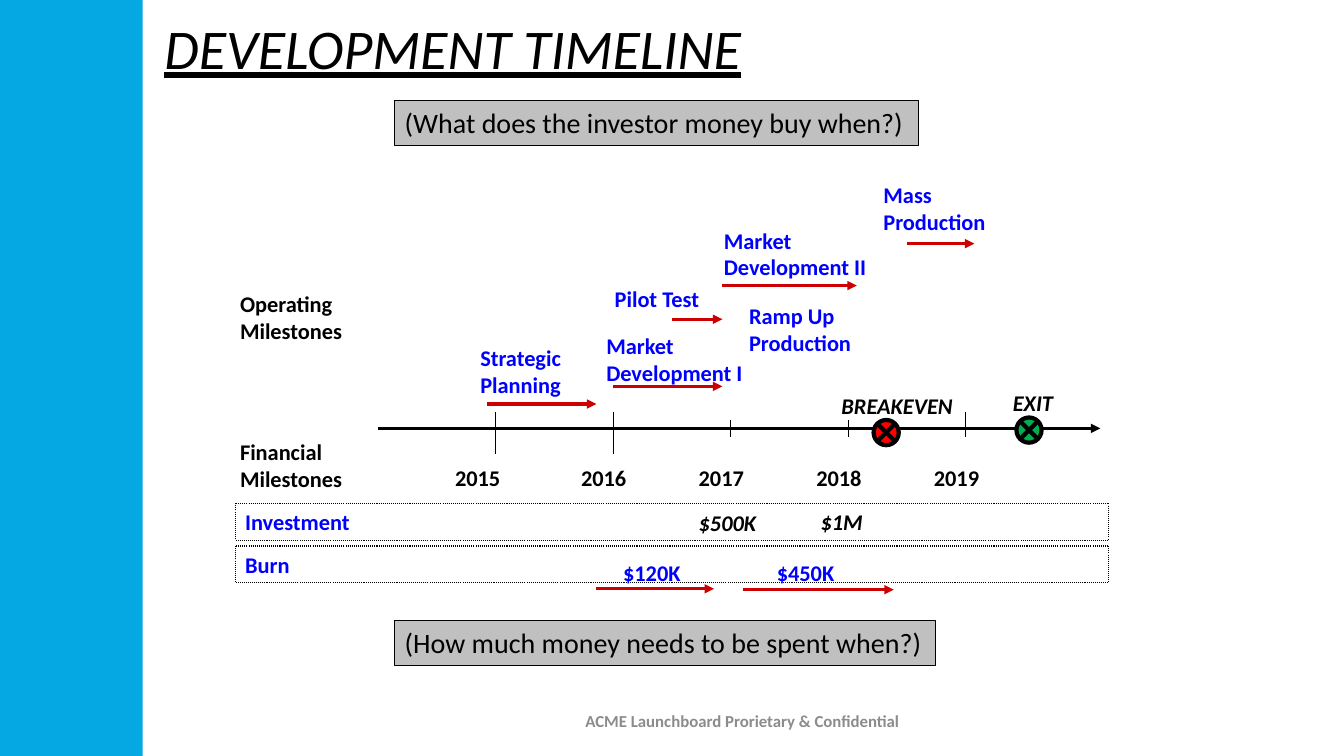
from lxml import etree
from pptx import Presentation
from pptx.dml.color import RGBColor
from pptx.enum.dml import MSO_LINE_DASH_STYLE as DASH
from pptx.enum.shapes import MSO_CONNECTOR, MSO_SHAPE as SHAPE
from pptx.enum.text import MSO_ANCHOR, MSO_AUTO_SIZE as FIT, PP_ALIGN
from pptx.oxml.ns import qn
from pptx.util import Inches, Pt

# The slide is a grid of 160 columns by 90 rows
COLUMNS, ROWS = 160, 90
CELL = Inches(1 / 12)

BLACK = RGBColor(0x00, 0x00, 0x00)
BLUE = RGBColor(0x00, 0x00, 0xFF)
CRIMSON = RGBColor(0xCC, 0x00, 0x00)
RED = RGBColor(0xFF, 0x00, 0x00)
GREEN = RGBColor(0x00, 0xB0, 0x50)
SKY = RGBColor(0x05, 0xA8, 0xE3)
SILVER = RGBColor(0xC0, 0xC0, 0xC0)
GRAY = RGBColor(0x8C, 0x8C, 0x8C)

AXIS_ROW = 51
FIRST_TICK, YEAR_STEP = 59, 14
LINE_HEIGHT, TWO_LINE_HEIGHT = 4.4, 7.7

# Year, offset of its label from the tick, top and bottom of the tick
YEARS = [
    ("2015", -6, 49, 54),
    ("2016", -5, 49, 54),
    ("2017", -5, 50, 52),
    ("2018", -5, 50, 52),
    ("2019", -5, 49, 52),
]
# Text, column, row, width
OPERATING = [
    ("Strategic\nPlanning", 56, 40.4, 12.7),
    ("Market\nDevelopment I", 71, 39, 18.8),
    ("Market\nDevelopment II", 85, 26.4, 19.6),
    ("Pilot Test", 72, 33.4, 12.6),
    ("Mass\nProduction", 104, 21, 15.4),
    ("Ramp Up\nProduction", 88, 35.4, 15.4),
]
BURN = [("$120K", 73, 66, 9.4), ("$450K", 91.3, 66, 9.4)]
HEADINGS = [
    ("Operating\nMilestones", 27.4, 34, 14.6),
    ("Financial\nMilestones", 27.4, 51.6, 14.6),
]
EVENTS = [
    ("BREAKEVEN", 99, 46.1, 15.8),
    ("EXIT", 119.4, 45.7, 7.3),
    ("$500K", 82, 60, 12),
    ("$1M", 96.5, 59.9, 10),
]
# Start column, end column, row
SPANS = [
    (58, 71, 48.1), (73, 86, 46), (80, 86, 38), (86, 102, 34),
    (108, 116, 29), (71, 85, 70.1), (88.4, 106.4, 70.2),
]


def grid(*cells):
    return [round(cell * CELL) for cell in cells]


def write(shape, text, size=16, color=BLACK, bold=True, italic=False, underline=False):
    frame = shape.text_frame
    frame.text = text
    frame.word_wrap = False
    frame.auto_size = FIT.SHAPE_TO_FIT_TEXT
    frame.vertical_anchor = MSO_ANCHOR.TOP
    for paragraph in frame.paragraphs:
        paragraph.alignment = PP_ALIGN.LEFT
        font = paragraph.font
        font.name, font.size = "Calibri", Pt(size)
        font.bold, font.italic, font.underline = bold, italic, underline
        font.color.rgb = color
    return frame


def add_label(slide, text, column, row, width, height=None, **style):
    height = height or (TWO_LINE_HEIGHT if "\n" in text else LINE_HEIGHT)
    label = slide.shapes.add_textbox(*grid(column, row, width, height))
    return write(label, text, **style)


def add_block(slide, kind, box, fill=None, weight=0, dash=None):
    block = slide.shapes.add_shape(kind, *grid(*box))
    block.shadow.inherit = False
    if fill is None:
        block.fill.background()
    else:
        block.fill.solid()
        block.fill.fore_color.rgb = fill
    if weight:
        block.line.color.rgb = BLACK
        block.line.width = Pt(weight)
        if dash:
            block.line.dash_style = dash
    else:
        block.line.fill.background()
    return block


def add_line(slide, start, end, color=BLACK, weight=2.25, arrow=True):
    line = slide.shapes.add_connector(MSO_CONNECTOR.STRAIGHT, *grid(*start, *end))
    line.line.color.rgb = color
    line.line.width = Pt(weight)
    if arrow:
        etree.SubElement(line.line._get_or_add_ln(), qn("a:tailEnd"), type="triangle")
    etree.SubElement(line._element.spPr, qn("a:effectLst"))


def add_question(slide, text, row, width):
    banner = add_block(slide, SHAPE.RECTANGLE, (47, row, width, 5.3), SILVER, 0.75)
    write(banner, text, size=20, bold=False)


def add_money_row(slide, text, row):
    box = (28, row, 104, LINE_HEIGHT)
    strip = add_block(slide, SHAPE.RECTANGLE, box, weight=0.75, dash=DASH.ROUND_DOT)
    write(strip, text, color=BLUE).word_wrap = True


def add_timeline(slide):
    add_line(slide, (45, AXIS_ROW), (131, AXIS_ROW))
    for index, (year, offset, top, bottom) in enumerate(YEARS):
        tick = FIRST_TICK + index * YEAR_STEP
        add_line(slide, (tick, bottom), (tick, top), weight=0.75, arrow=False)
        add_label(slide, year, tick + offset, 54.7, 7.9)
    for start, end, row in SPANS:
        add_line(slide, (start, row), (end, row), CRIMSON)
    for column, row, color in ((104, 50, RED), (121, 49.7, GREEN)):
        add_block(slide, SHAPE.FLOWCHART_SUMMING_JUNCTION, (column, row, 3, 3), color, 3)


def main():
    deck = Presentation()
    deck.slide_width, deck.slide_height = grid(COLUMNS, ROWS)
    slide = deck.slides.add_slide(deck.slide_layouts[6])

    # Side band, title and questions
    add_block(slide, SHAPE.RECTANGLE, (0, 0, 17, ROWS), SKY)
    add_label(slide, "DEVELOPMENT TIMELINE", 18.4, 1, 71.8, 9.2,
              size=40, bold=False, italic=True, underline=True)
    add_question(slide, "(What does the investor money buy when?)", 12, 62.3)
    add_question(slide, "(How much money needs to be spent when?)", 73.9, 64.4)

    # Money rows and timeline
    add_money_row(slide, "Investment", 59.9)
    add_money_row(slide, "Burn", 65)
    add_timeline(slide)

    # Milestone, event and amount labels
    for heading in HEADINGS:
        add_label(slide, *heading)
    for milestone in OPERATING + BURN:
        add_label(slide, *milestone, color=BLUE)
    for event in EVENTS:
        add_label(slide, *event, italic=True)

    # Footer
    footer = add_label(slide, "ACME Launchboard Prorietary & Confidential",
                       61.4, 83.4, 54, 4.8, size=12, color=GRAY)
    footer.word_wrap = True
    footer.auto_size = FIT.NONE
    footer.vertical_anchor = MSO_ANCHOR.MIDDLE
    footer.paragraphs[0].alignment = PP_ALIGN.CENTER

    deck.save("out.pptx")


if __name__ == "__main__":
    main()
